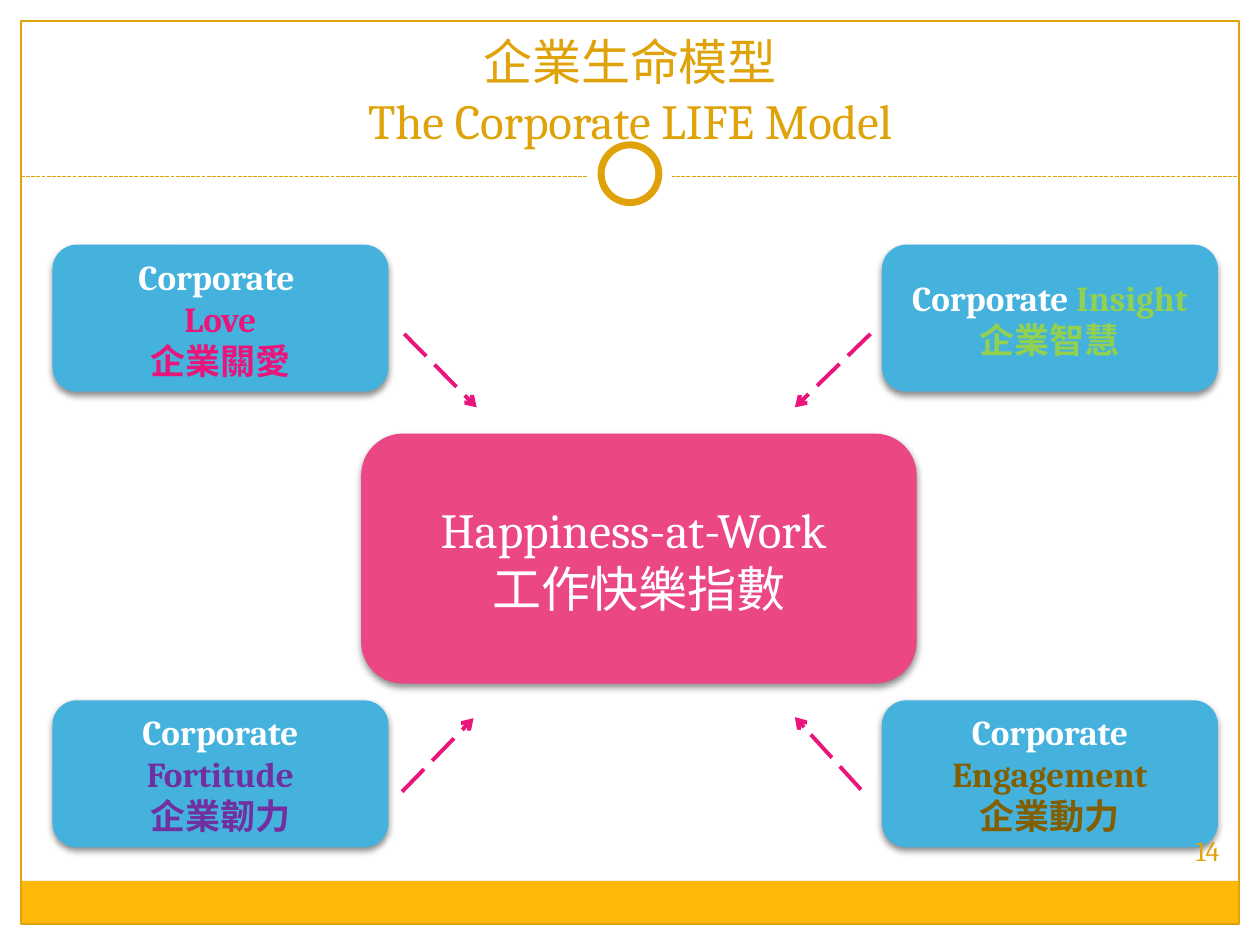
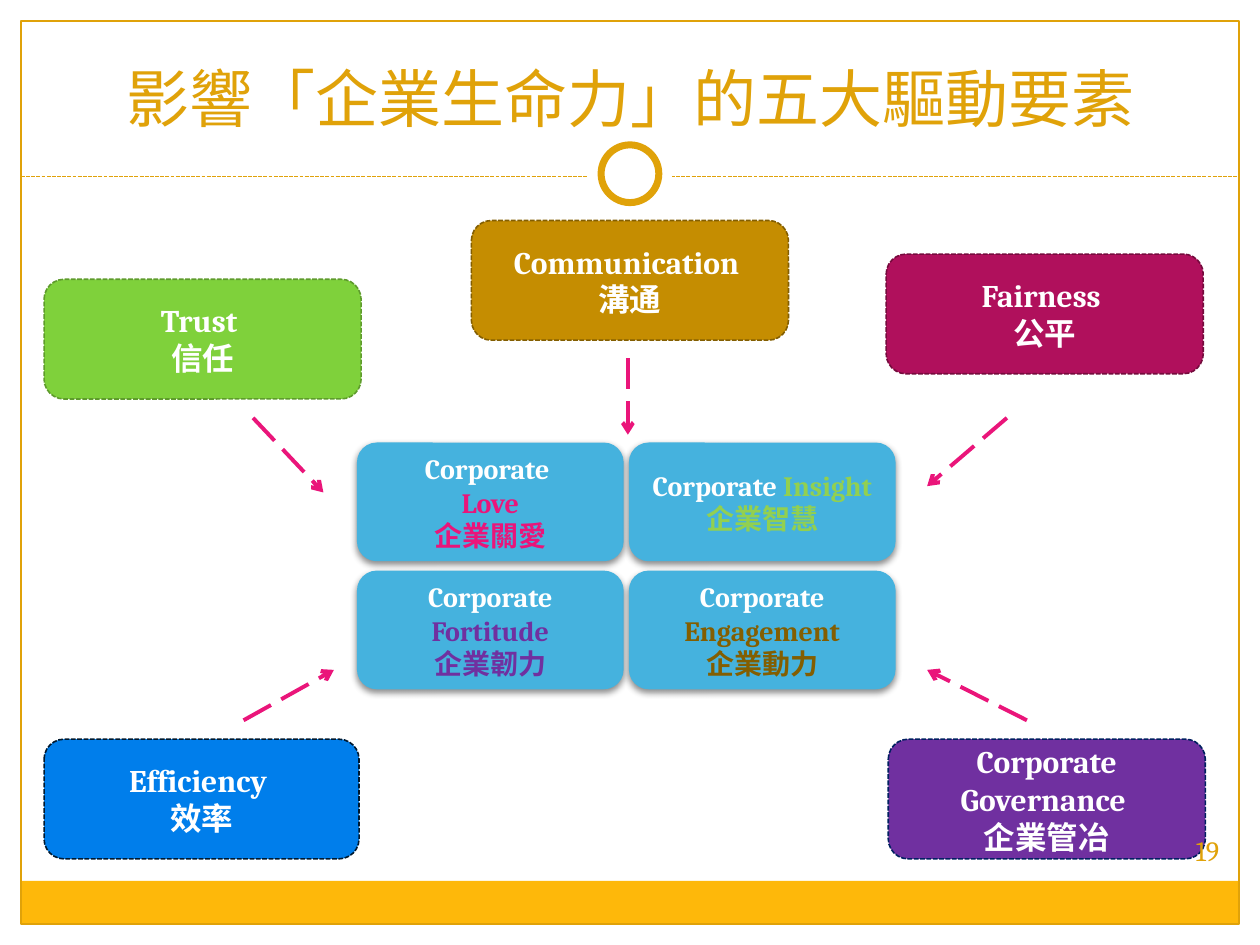
from typing import NamedTuple

from pptx import Presentation
from pptx.dml.color import RGBColor
from pptx.enum.dml import MSO_LINE
from pptx.enum.shapes import MSO_CONNECTOR, MSO_SHAPE
from pptx.enum.text import MSO_ANCHOR, MSO_AUTO_SIZE, PP_ALIGN
from pptx.oxml import parse_xml
from pptx.oxml.ns import nsdecls, qn
from pptx.util import Inches, Pt

RECT, ROUND, OVAL = MSO_SHAPE.RECTANGLE, MSO_SHAPE.ROUNDED_RECTANGLE, MSO_SHAPE.OVAL
STRAIGHT = MSO_CONNECTOR.STRAIGHT
SHORT_DASH, LONG_DASH = MSO_LINE.SQUARE_DOT, MSO_LINE.LONG_DASH
MIDDLE, BOTTOM, CENTER = MSO_ANCHOR.MIDDLE, MSO_ANCHOR.BOTTOM, PP_ALIGN.CENTER
NO_FIT = MSO_AUTO_SIZE.NONE

# Grid: 120 columns by 90 rows, one twelfth of an inch each
CELL = Inches(10) // 120

LATIN, CJK = "Cambria", "Noto Sans CJK SC"
WHITE, GOLD, AMBER = "FFFFFF", "E0A209", "FEB80A"
BLUE, PINK, ROSE = "45B2DE", "EA157A", "EB4785"
GREEN, PURPLE, BROWN = "92D050", "7030A0", "835E01"


class Box(NamedTuple):
    col: float
    row: float
    cols: float
    rows: float


class Arrow(NamedTuple):
    col1: float
    row1: float
    col2: float
    row2: float


class Part(NamedTuple):
    """A part of the model: paragraphs of (text, colour) runs."""
    lines: list


class Driver(NamedTuple):
    box: Box
    english: str
    chinese: str
    fill: str
    edge: str


# Content: the four parts, row by row
PARTS = [
    Part([[("Corporate ", WHITE)], [("Love", PINK)], [("企業關愛", PINK)]]),
    Part([[("Corporate ", WHITE), ("Insight", GREEN)], [("企業智慧", GREEN)]]),
    Part([[("Corporate ", WHITE), ("Fortitude", PURPLE)], [("企業韌力", PURPLE)]]),
    Part([[("Corporate ", WHITE), ("Engagement", BROWN)], [("企業動力", BROWN)]]),
]
MODEL_ARROWS = [
    Arrow(38.5, 31.8, 45.4, 38.8), Arrow(82.9, 31.8, 75.7, 38.8),
    Arrow(38.3, 75.4, 45.1, 68.4), Arrow(82, 75.2, 75.7, 68.3),
]
DRIVERS = [
    Driver(Box(4.2, 26.6, 30.2, 11.4), "Trust ", "信任", "7FD13B", "5E9B2C"),
    Driver(Box(84.4, 24.2, 30.2, 11.4), "Fairness ", "公平", "B0105C", "750B3D"),
    Driver(Box(44.9, 21, 30.2, 11.4), "Communication ", "溝通", "C58D01", BROWN),
    Driver(Box(84.6, 70.4, 30.2, 11.4), "Corporate Governance ", "企業管冶", PURPLE, "002060"),
    Driver(Box(4.2, 70.4, 30, 11.4), "Efficiency ", "效率", "007EEB", "00192F"),
]
DRIVER_ARROWS = [
    Arrow(97.8, 68.6, 88.3, 63.8), Arrow(95.9, 39.8, 88.3, 46.3),
    Arrow(23.2, 68.6, 31.8, 63.8), Arrow(59.8, 34.1, 59.8, 41.4),
    Arrow(24.1, 39.8, 30.8, 46.9),
]


def rgb(color: str) -> RGBColor:
    return RGBColor.from_string(color)


def grid(*units: float) -> list:
    return [round(u * CELL) for u in units]


# Text
def style_run(r, size: float, color: str, bold: bool = False) -> None:
    is_cjk = any(ord(ch) > 0x2E80 for ch in r.text)
    r.font.size, r.font.bold = Pt(size), bold
    r.font.color.rgb = rgb(color)
    r.font.name = CJK if is_cjk else LATIN
    if is_cjk:
        ea = parse_xml(f'<a:ea {nsdecls("a")} typeface="{CJK}"/>')
        r.font._element.find(qn("a:latin")).addnext(ea)


def write_lines(sp, lines: list, size: float, bold: bool = False) -> None:
    tf = sp.text_frame
    tf.word_wrap, tf.vertical_anchor = True, MIDDLE
    for i, line in enumerate(lines):
        p = tf.add_paragraph() if i else tf.paragraphs[0]
        p.alignment = CENTER
        for text, color in line:
            r = p.add_run()
            r.text = text
            style_run(r, size, color, bold)


# Shapes and lines
def add_box(shapes, kind, box: Box, fill: str = "", line: str = "",
            width: float = 0.75, dash=None, shadow: bool = False):
    sp = shapes.add_shape(kind, *grid(*box))
    sp.shadow.inherit = False
    if fill:
        sp.fill.solid()
        sp.fill.fore_color.rgb = rgb(fill)
    else:
        sp.fill.background()
    if line:
        sp.line.color.rgb = rgb(line)
        sp.line.width = Pt(width)
        sp.line.dash_style = dash
    else:
        sp.line.fill.background()
    if shadow:
        sp._element.spPr.find(qn("a:effectLst")).append(parse_xml(
            f'<a:outerShdw {nsdecls("a")} blurRad="{Pt(4)}" dist="{Pt(2)}" dir="5400000" '
            'rotWithShape="0"><a:srgbClr val="000000"><a:alpha val="45000"/>'
            '</a:srgbClr></a:outerShdw>'))
    return sp


def add_line(shapes, ends: Arrow, color: str, width: float, dash, head: bool = False) -> None:
    line = shapes.add_connector(STRAIGHT, *grid(*ends))
    line.line.color.rgb = rgb(color)
    line.line.width = Pt(width)
    line.line.dash_style = dash
    if head:
        line.line._get_or_add_ln().append(
            parse_xml(f'<a:tailEnd {nsdecls("a")} type="arrow"/>'))
    line._element.spPr.append(parse_xml(f'<a:effectLst {nsdecls("a")}/>'))


def add_arrows(shapes, arrows: list) -> None:
    for arrow in arrows:
        add_line(shapes, arrow, PINK, 2.25, LONG_DASH, head=True)


def add_parts(shapes, first: Box, col_step: float, row_step: float, size: float) -> None:
    for i, part in enumerate(PARTS):
        row, col = divmod(i, 2)
        box = first._replace(col=first.col + col * col_step, row=first.row + row * row_step)
        sp = add_box(shapes, ROUND, box, BLUE, shadow=True)
        write_lines(sp, part.lines, size, bold=True)


# Shared frame, title and slide number
def add_frame(shapes) -> None:
    add_box(shapes, RECT, Box(2, 83.9, 116, 4.1), AMBER)
    add_box(shapes, RECT, Box(2, 2, 116, 86), line=GOLD)
    add_line(shapes, Arrow(2, 16.8, 118, 16.8), GOLD, 0.75, SHORT_DASH)
    add_box(shapes, OVAL, Box(56, 12.6, 8, 8), WHITE)
    add_box(shapes, OVAL, Box(57.25, 13.8, 5.5, 5.5), WHITE, GOLD, 4)


def add_title(s, text: str, size: float, row: float) -> None:
    title = s.shapes.title
    title.left, title.top, title.width, title.height = grid(4, row, 112, 10)
    tf = title.text_frame
    tf.text = text
    tf.auto_size, tf.word_wrap, tf.vertical_anchor = NO_FIT, True, BOTTOM
    p = tf.paragraphs[0]
    p.alignment = CENTER
    for r in p.runs:
        style_run(r, size, GOLD)
    # The title lies in front of the ring
    title._element.getparent().append(title._element)


def add_number(shapes, number: int) -> None:
    sp = shapes.add_textbox(*grid(112, 78.1, 6, 5.8))
    tf = sp.text_frame
    tf.margin_left = tf.margin_right = tf.margin_top = tf.margin_bottom = Inches(0.05)
    write_lines(sp, [[(str(number), GOLD)]], 16)


def new_slide(prs, title: str, size: float, title_row: float):
    s = prs.slides.add_slide(prs.slide_layouts[5])
    add_frame(s.shapes)
    add_title(s, title, size, title_row)
    return s


# Slides
def build_model(prs) -> None:
    s = new_slide(prs, "企業生命模型\vThe Corporate LIFE Model", 28, 4.8)
    add_parts(s.shapes, Box(5, 23.3, 32, 14), 79, 43.4, 20)
    add_arrows(s.shapes, MODEL_ARROWS)
    core = add_box(s.shapes, ROUND, Box(34.4, 41.3, 52.9, 23.8), ROSE, shadow=True)
    write_lines(core, [[("Happiness-at-Work ", WHITE)], [("工作快樂指數", WHITE)]], 28)
    add_number(s.shapes, 14)


def build_drivers(prs) -> None:
    s = new_slide(prs, "影響「企業生命力」的五大驅動要素", 36, 3.5)
    group = s.shapes.add_group_shape()
    add_parts(group.shapes, Box(34, 42.15, 25.4, 11.3), 25.9, 12.2, 16)
    for d in DRIVERS:
        sp = add_box(s.shapes, ROUND, d.box, d.fill, d.edge, 0.9, SHORT_DASH)
        write_lines(sp, [[(d.english, WHITE)], [(d.chinese, WHITE)]], 18, bold=True)
    add_arrows(s.shapes, DRIVER_ARROWS)
    add_number(s.shapes, 19)


def main() -> None:
    prs = Presentation()
    prs.slide_width, prs.slide_height = grid(120, 90)
    build_model(prs)
    build_drivers(prs)
    prs.save("out.pptx")


if __name__ == "__main__":
    main()
